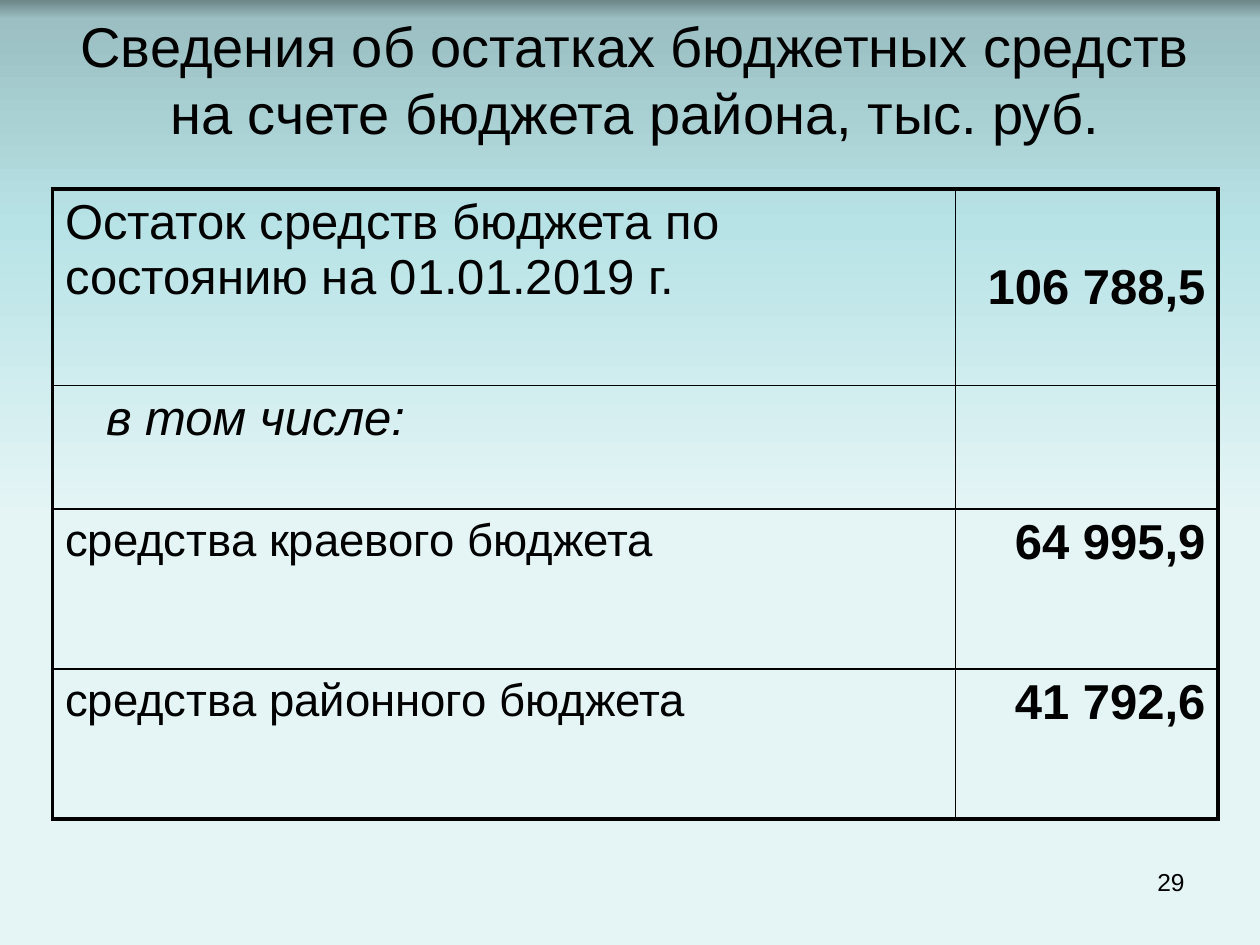
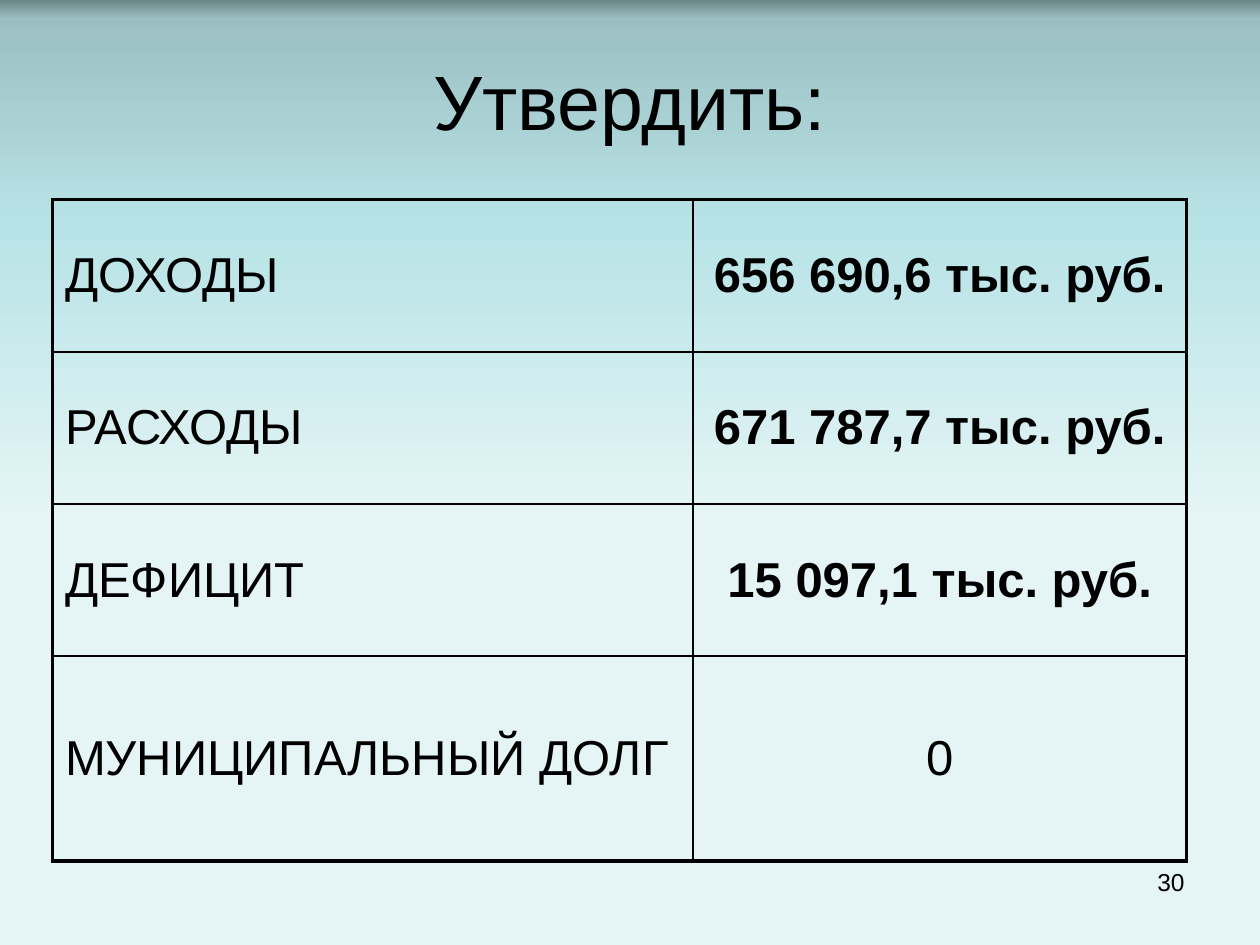
import pptx
import pptx.util
import pptx.dml.color
import pptx.enum.text
import pptx.oxml.ns
import lxml.etree

PX = 7620  # EMU per px, 120 px to the inch
FONT = "Arial"
COLORS = {
    "ink": "000000",
    "band_top": "6D8688",
    "band_edge": "9BBFC2",
    "aqua": "B8E3E6",
    "pale": "E5F5F6",
}
BACKGROUND_STOPS = [(0, "band_top"), (2, "band_edge"), (24, "aqua"), (55, "pale")]
ALIGN = pptx.enum.text.PP_ALIGN
ANCHOR = pptx.enum.text.MSO_ANCHOR
OUTER_LINE, INNER_LINE = 2.25, 1


def px(length):
    return pptx.util.Emu(length * PX)


def add_xml(parent, tag, **attributes):
    return lxml.etree.SubElement(parent, pptx.oxml.ns.qn(tag), attributes)


class Deck:
    def __init__(self):
        self.presentation = pptx.Presentation()
        self.presentation.slide_width = px(1200)
        self.presentation.slide_height = px(900)
        self.slide = None

    def add_slide(self, number):
        self.slide = self.presentation.slides.add_slide(self.presentation.slide_layouts[6])
        self.paint_background()
        self.add_text((860, 820, 280, 62), str(number), 14, ALIGN.RIGHT, ANCHOR.TOP)

    def paint_background(self):
        fill = self.slide.background.fill
        fill.gradient()
        fill.gradient_angle = 270
        stops = self.slide.element.find(".//" + pptx.oxml.ns.qn("a:gsLst"))
        for stop in list(stops):
            stops.remove(stop)
        for percent, color in BACKGROUND_STOPS:
            stop = add_xml(stops, "a:gs", pos=str(percent * 1000))
            add_xml(stop, "a:srgbClr", val=COLORS[color])

    def add_styled_run(self, text_frame, text, size, align, bold=False, italic=False):
        paragraph = text_frame.paragraphs[0]
        paragraph.alignment = align
        run = paragraph.add_run()
        run.text = text
        run.font.name = FONT
        run.font.size = pptx.util.Pt(size)
        run.font.bold = bold
        run.font.italic = italic
        run.font.color.rgb = pptx.dml.color.RGBColor.from_string(COLORS["ink"])

    def add_text(self, box, text, size, align, anchor):
        text_frame = self.slide.shapes.add_textbox(*map(px, box)).text_frame
        text_frame.word_wrap = True
        text_frame.vertical_anchor = anchor
        self.add_styled_run(text_frame, text, size, align)

    def add_title(self, box, text, size):
        self.add_text(box, text, size, ALIGN.CENTER, ANCHOR.MIDDLE)

    def add_table(self, left, top, widths, heights, rows, anchor):
        """Each cell is None or a dict of text settings."""
        frame = self.slide.shapes.add_table(
            len(heights), len(widths), px(left), px(top), px(sum(widths)), px(sum(heights)))
        table = frame.table
        table.first_row = table.horz_banding = False
        for column, width in zip(table.columns, widths):
            column.width = px(width)
        for row, height in zip(table.rows, heights):
            row.height = px(height)
        last_row, last_column = len(heights) - 1, len(widths) - 1
        for i, row in enumerate(rows):
            for j, content in enumerate(row):
                cell = table.cell(i, j)
                cell.vertical_anchor = anchor
                cell.fill.background()
                self.set_borders(cell, L=j == 0, R=j == last_column, T=i == 0, B=i == last_row)
                if content:
                    settings = dict(content)
                    cell.margin_left = px(settings.pop("margin_left", 12))
                    cell.margin_top = px(settings.pop("margin_top", 6))
                    self.add_styled_run(cell.text_frame, **settings)

    def set_borders(self, cell, **outer_sides):
        properties = cell._tc.get_or_add_tcPr()
        for index, (side, is_outer) in enumerate(outer_sides.items()):
            width = pptx.util.Pt(OUTER_LINE if is_outer else INNER_LINE)
            line = add_xml(properties, "a:ln" + side, w=str(int(width)))
            add_xml(add_xml(line, "a:solidFill"), "a:srgbClr", val=COLORS["ink"])
            properties.insert(index, line)


def label(text, size=28, **settings):
    return dict(text=text, size=size, align=ALIGN.LEFT, **settings)


def value(text, align, bold=True, **settings):
    return dict(text=text, size=28, align=align, bold=bold, **settings)


def build_balances(deck):
    deck.add_slide(29)
    deck.add_title((30, 30, 1150, 90),
                   "Сведения об остатках бюджетных средств на счете бюджета района, тыс. руб.", 32)
    rows = [
        (label("Остаток средств бюджета по состоянию на 01.01.2019 г."),
         value("106 788,5", ALIGN.RIGHT, margin_top=68)),
        (label("в том числе:", italic=True, margin_left=51), None),
        (label("средства краевого бюджета", 26), value("64 995,9", ALIGN.RIGHT)),
        (label("средства районного бюджета", 26), value("41 792,6", ALIGN.RIGHT)),
    ]
    deck.add_table(50, 180, [860, 250], [187, 118, 152, 143], rows, ANCHOR.TOP)


def build_approval(deck):
    deck.add_slide(30)
    deck.add_title((60, 40, 1080, 110), "Утвердить:", 44)
    amounts = [
        ("ДОХОДЫ", "656 690,6 тыс. руб."),
        ("РАСХОДЫ", "671 787,7 тыс. руб."),
        ("ДЕФИЦИТ", "15 097,1 тыс. руб."),
        ("МУНИЦИПАЛЬНЫЙ ДОЛГ", "0"),
    ]
    rows = [(label(name), value(amount, ALIGN.CENTER, bold=amount != "0"))
            for name, amount in amounts]
    deck.add_table(50, 190, [610, 470], [145] * 3 + [195], rows, ANCHOR.MIDDLE)


def main():
    deck = Deck()
    # Slide with account balances
    build_balances(deck)
    # Slide with figures to approve
    build_approval(deck)
    deck.presentation.save("out.pptx")


if __name__ == "__main__":
    main()
